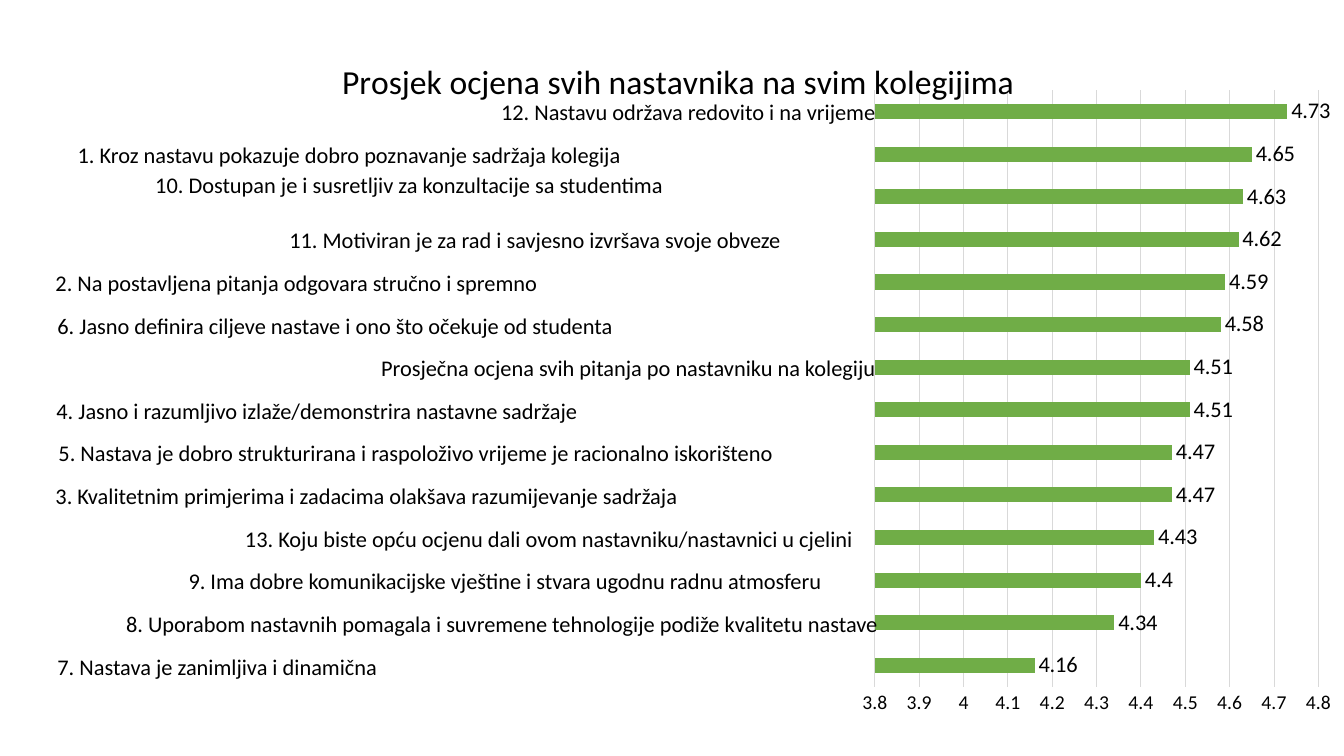
import dataclasses

import lxml.etree
import pptx
import pptx.chart.data
import pptx.dml.color
import pptx.enum.chart
import pptx.enum.text
import pptx.oxml.ns
import pptx.util

Inches = pptx.util.Inches
Pt = pptx.util.Pt
qn = pptx.oxml.ns.qn

BLACK = pptx.dml.color.RGBColor(0x00, 0x00, 0x00)
GREEN = pptx.dml.color.RGBColor(0x70, 0xAD, 0x47)
GRAY = pptx.dml.color.RGBColor(0xD9, 0xD9, 0xD9)
FONT = "Calibri"
TITLE = "Prosjek ocjena svih nastavnika na svim kolegijima"

# Chart frame in inches, and the plot area as fractions of it
CHART_TOP, CHART_W, CHART_H = 0.24, 13.33, 7.06
PLOT_X, PLOT_Y, PLOT_W, PLOT_H = 0.65, 0.09, 0.33, 0.84
ROWS_TOP, ROWS_H = 0.9, 5.92
LABEL_RIGHT, LABEL_H = 8.8, 0.34


@dataclasses.dataclass
class Rating:
    question: str
    score: float
    left: float
    shift: float = 0


# From the top bar to the bottom one
RATINGS = [
    Rating("12. Nastavu održava redovito i na vrijeme", 4.73, 4.97),
    Rating("1. Kroz nastavu pokazuje dobro poznavanje sadržaja kolegija", 4.65, 0.77),
    Rating("10. Dostupan je i susretljiv za konzultacije sa studentima", 4.63, 1.54, -0.13),
    Rating("11. Motiviran je za rad i savjesno izvršava svoje obveze", 4.62, 2.87),
    Rating("2. Na postavljena pitanja odgovara stručno i spremno", 4.59, 0.55),
    Rating("6. Jasno definira ciljeve nastave i ono što očekuje od studenta", 4.58, 0.57),
    Rating("Prosječna ocjena svih pitanja po nastavniku na kolegiju", 4.51, 3.78),
    Rating("4. Jasno i razumljivo izlaže/demonstrira nastavne sadržaje", 4.51, 0.56),
    Rating("5. Nastava je dobro strukturirana i raspoloživo vrijeme je racionalno iskorišteno",
           4.47, 0.58),
    Rating("3. Kvalitetnim primjerima i zadacima olakšava razumijevanje sadržaja", 4.47, 0.55),
    Rating("13. Koju biste opću ocjenu dali ovom nastavniku/nastavnici u cjelini", 4.43, 2.43),
    Rating("9. Ima dobre komunikacijske vještine i stvara ugodnu radnu atmosferu", 4.4, 1.87),
    Rating("8. Uporabom nastavnih pomagala i suvremene tehnologije podiže kvalitetu nastave",
           4.34, 1.25),
    Rating("7. Nastava je zanimljiva i dinamična", 4.16, 0.57),
]


def set_font(font, size: float) -> None:
    font.name = FONT
    font.size = Pt(size)
    font.bold = False
    font.color.rgb = BLACK


def set_layout(parent, index: int, settings: dict) -> None:
    """Give a chart part a manual layout."""
    for old in parent.findall(qn("c:layout")):
        parent.remove(old)
    layout = lxml.etree.Element(qn("c:layout"))
    manual = lxml.etree.SubElement(layout, qn("c:manualLayout"))
    for key, value in settings.items():
        lxml.etree.SubElement(manual, qn(f"c:{key}")).set("val", str(value))
    parent.insert(index, layout)


def add_ratings_chart(slide) -> None:
    data = pptx.chart.data.CategoryChartData()
    data.categories = [r.question for r in reversed(RATINGS)]
    data.add_series(TITLE, [r.score for r in reversed(RATINGS)])
    chart = slide.shapes.add_chart(
        pptx.enum.chart.XL_CHART_TYPE.BAR_CLUSTERED, 0, Inches(CHART_TOP),
        Inches(CHART_W), Inches(CHART_H), data).chart
    set_font(chart.font, 10)
    chart.has_legend = False

    # Title
    chart.has_title = True
    tf = chart.chart_title.text_frame
    tf.text = TITLE
    set_font(tf.paragraphs[0].runs[0].font, 24)
    set_layout(chart.chart_title._element, 1,
               {"xMode": "edge", "yMode": "edge", "x": 0.25, "y": 0.04})

    # Bars and their values
    plot = chart.plots[0]
    plot.gap_width = 182
    plot.vary_by_categories = False
    series = plot.series[0]
    series.format.fill.solid()
    series.format.fill.fore_color.rgb = GREEN
    labels = series.data_labels
    labels.show_value = True
    labels.position = pptx.enum.chart.XL_LABEL_POSITION.OUTSIDE_END
    set_font(labels.font, 16)

    # Axes
    none = pptx.enum.chart.XL_TICK_MARK.NONE
    for axis in (chart.category_axis, chart.value_axis):
        axis.major_tick_mark = axis.minor_tick_mark = none
    cats, vals = chart.category_axis, chart.value_axis
    cats.tick_label_position = pptx.enum.chart.XL_TICK_LABEL_POSITION.NONE
    vals.minimum_scale, vals.maximum_scale, vals.major_unit = 3.8, 4.8, 0.1
    vals.format.line.fill.background()
    vals.has_major_gridlines = True
    set_font(vals.tick_labels.font, 14)
    for line in (cats.format.line, vals.major_gridlines.format.line):
        line.color.rgb = GRAY
        line.width = Pt(0.75)

    set_layout(chart._chartSpace.chart.plotArea, 0, {
        "layoutTarget": "inner", "xMode": "edge", "yMode": "edge",
        "x": PLOT_X + 0.001, "y": PLOT_Y + 0.003, "w": PLOT_W, "h": PLOT_H - 0.002})


def add_question(slide, rating: Rating, row: int) -> None:
    middle = ROWS_TOP + ROWS_H / len(RATINGS) * (row + 0.5) + rating.shift
    sp = slide.shapes.add_textbox(
        Inches(rating.left), Inches(middle - LABEL_H / 2),
        Inches(LABEL_RIGHT - rating.left), Inches(LABEL_H))
    tf = sp.text_frame
    tf.word_wrap = True
    tf.margin_left = tf.margin_right = tf.margin_top = tf.margin_bottom = 0
    tf.vertical_anchor = pptx.enum.text.MSO_ANCHOR.MIDDLE
    tf.text = rating.question
    set_font(tf.paragraphs[0].runs[0].font, 16)


def main() -> None:
    prs = pptx.Presentation()
    prs.slide_width, prs.slide_height = Inches(13.33), Inches(7.5)
    slide = prs.slides.add_slide(prs.slide_layouts[6])
    add_ratings_chart(slide)
    # Questions, each with its own indent, beside the bars
    for row, rating in enumerate(RATINGS):
        add_question(slide, rating, row)
    prs.save("out.pptx")


if __name__ == "__main__":
    main()
